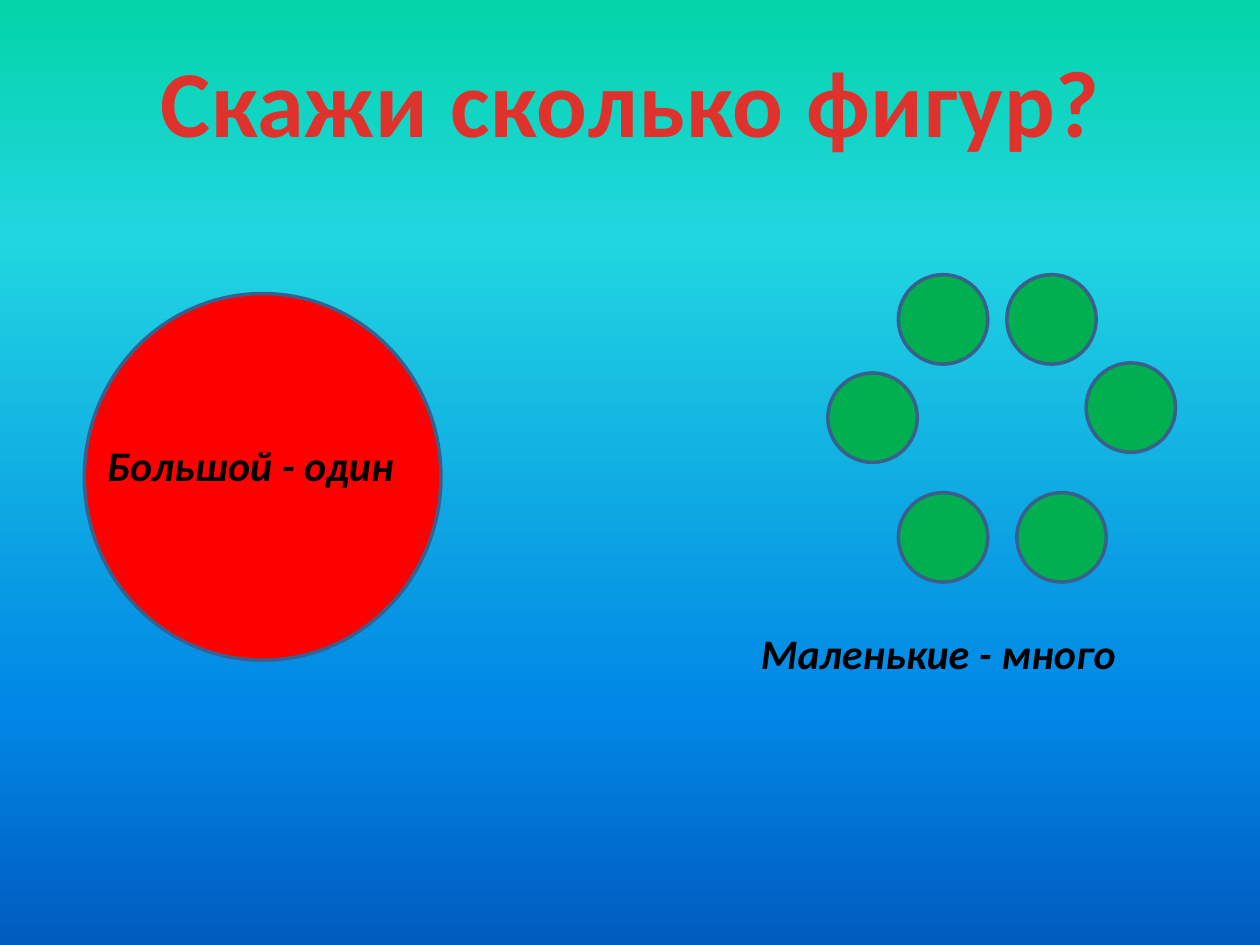
from copy import deepcopy

from pptx import Presentation
from pptx.dml.color import RGBColor
from pptx.enum.shapes import MSO_SHAPE
from pptx.enum.text import MSO_ANCHOR, MSO_AUTO_SIZE, PP_ALIGN
from pptx.oxml.ns import qn
from pptx.util import Inches, Pt

RED = RGBColor(0xFF, 0x00, 0x00)
GREEN = RGBColor(0x00, 0xB0, 0x50)
OUTLINE = RGBColor(0x3A, 0x5F, 0x8C)
BLACK = RGBColor(0x00, 0x00, 0x00)
SKY_STOPS = [
    (0, RGBColor(0x03, 0xD4, 0xA8)),
    (0.25, RGBColor(0x21, 0xD6, 0xE0)),
    (0.75, RGBColor(0x00, 0x87, 0xE6)),
    (1, RGBColor(0x00, 0x5C, 0xBF)),
]
TITLE_STOPS = [
    (0.25, RGBColor(0xE0, 0x32, 0x2D)),
    (1, RGBColor(0xA2, 0x20, 0x1C)),
]

SMALL_SIZE = 0.71
SMALL_CIRCLES = [
    (6.57, 2.96),
    (7.13, 2.18),
    (7.13, 3.91),
    (8.07, 3.91),
    (8.62, 2.88),
    (7.99, 2.18),
]


def apply_gradient(fill, owner, stops):
    fill.gradient()
    fill.gradient_angle = 270
    stop_list = owner.find(".//" + qn("a:gsLst"))
    while len(stop_list) < len(stops):
        stop_list.append(deepcopy(stop_list[0]))
    for stop, (position, color) in zip(fill.gradient_stops, stops):
        stop.position = position
        stop.color.rgb = color


def place(shape, left, top, width, height):
    shape.left, shape.top = Inches(left), Inches(top)
    shape.width, shape.height = Inches(width), Inches(height)


def write_text(box, text, size=24, color=BLACK, italic=True, align=PP_ALIGN.LEFT, wrap=True):
    frame = box.text_frame
    frame.word_wrap = wrap
    frame.auto_size = MSO_AUTO_SIZE.SHAPE_TO_FIT_TEXT
    frame.vertical_anchor = MSO_ANCHOR.TOP
    para = frame.paragraphs[0]
    para.alignment = align
    span = para.add_run()
    span.text = text
    span.font.name = "Calibri"
    span.font.size = Pt(size)
    span.font.bold = True
    span.font.italic = italic
    span.font.color.rgb = color
    return span


def add_title(page, text):
    title = page.shapes.title
    place(title, 1.14, 0.29, 7.73, 1.01)
    span = write_text(title, text, size=54, italic=False, align=PP_ALIGN.CENTER, wrap=False)
    apply_gradient(span.font.fill, title.element, TITLE_STOPS)
    title.element.find(".//" + qn("a:rPr")).set("spc", "50")


def add_circle(page, left, top, width, height, color):
    circle = page.shapes.add_shape(
        MSO_SHAPE.OVAL, Inches(left), Inches(top), Inches(width), Inches(height)
    )
    circle.shadow.inherit = False
    circle.fill.solid()
    circle.fill.fore_color.rgb = color
    circle.line.color.rgb = OUTLINE
    circle.line.width = Pt(2)


def add_label(page, text, left, top, width):
    box = page.shapes.add_textbox(Inches(left), Inches(top), Inches(width), Inches(0.5))
    write_text(box, text)


def main():
    deck = Presentation()
    deck.slide_width, deck.slide_height = Inches(10), Inches(7.5)
    page = deck.slides.add_slide(deck.slide_layouts.get_by_name("Title Only"))
    apply_gradient(page.background.fill, page.element, SKY_STOPS)
    add_title(page, "Скажи сколько фигур?")
    add_circle(page, 0.67, 2.33, 2.83, 2.91, RED)
    for left, top in SMALL_CIRCLES:
        add_circle(page, left, top, SMALL_SIZE, SMALL_SIZE, GREEN)
    add_label(page, "Большой - один", 0.75, 3.44, 2.6)
    add_label(page, "Маленькие - много", 5.94, 4.93, 3.62)
    deck.save("out.pptx")


if __name__ == "__main__":
    main()
